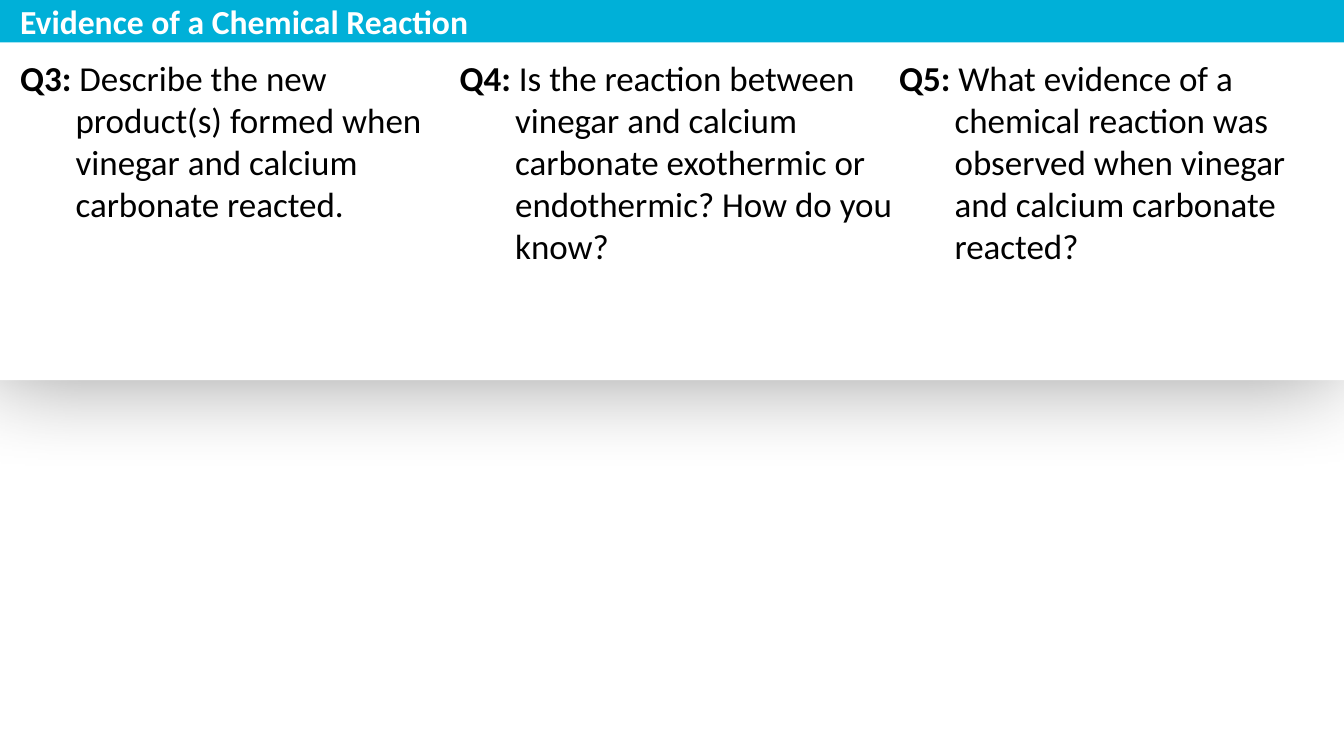
"""Build the slide with three questions on the evidence of a chemical reaction."""
from dataclasses import dataclass
from typing import Any

from lxml.etree import SubElement
from pptx import Presentation
from pptx.dml.color import RGBColor
from pptx.enum.shapes import MSO_SHAPE as Preset
from pptx.enum.text import MSO_ANCHOR as Anchor, MSO_AUTO_SIZE as AutoSize, PP_ALIGN as Align
from pptx.oxml.ns import qn
from pptx.util import Inches, Pt

WHITE = RGBColor(0xFF, 0xFF, 0xFF)
BLACK = RGBColor(0x00, 0x00, 0x00)
CYAN = RGBColor(0x00, 0xB0, 0xD8)

WIDTH, HEIGHT = Inches(13.33), Inches(7.38)
MARGIN, COLUMN_STEP, COLUMN_WIDTH = 1.5, 32.7, 32.4
HANG = Inches(0.55)

FRAME_FORMAT = {
    "margin_left": 0, "margin_right": 0, "margin_top": 0, "margin_bottom": 0,
    "word_wrap": True, "auto_size": AutoSize.NONE,
}
PARAGRAPH_FORMAT = {
    "alignment": Align.LEFT, "space_before": Pt(0), "space_after": Pt(0), "line_spacing": 1.0,
}


@dataclass(frozen=True)
class Area:
    """A rectangle in percent of the slide's width and height."""
    left: float
    top: float
    width: float
    height: float


@dataclass(frozen=True)
class Band:
    """A full-width filled rectangle."""
    area: Area
    fill: RGBColor
    shadowed: bool = False


@dataclass(frozen=True)
class Question:
    """A numbered question."""
    label: str
    wording: str


BANDS = [
    Band(Area(0, 3.66, 100, 47.43), WHITE, shadowed=True),
    Band(Area(0, 0, 100, 5.69), CYAN),
]
QUESTIONS = [
    Question("Q3: ", "Describe the new product(s) formed when vinegar and calcium "
                     "carbonate reacted."),
    Question("Q4: ", "Is the reaction between vinegar and calcium carbonate exothermic "
                     "or endothermic? How do you know?"),
    Question("Q5: ", "What evidence of a chemical reaction was observed when vinegar "
                     "and calcium carbonate reacted?"),
]


def apply(target: Any, values: dict[str, Any]) -> None:
    """Set each named attribute on the target."""
    for attribute, value in values.items():
        setattr(target, attribute, value)


def bounds(area: Area) -> dict[str, int]:
    """Turn percentages into slide lengths."""
    return {
        "left": round(WIDTH * area.left / 100), "top": round(HEIGHT * area.top / 100),
        "width": round(WIDTH * area.width / 100), "height": round(HEIGHT * area.height / 100),
    }


def cast_shadow(panel: Any) -> None:
    """Give the panel a wide soft shadow."""
    effects = panel._element.spPr.find(qn("a:effectLst"))
    shadow = SubElement(effects, qn("a:outerShdw"), blurRad=str(Pt(68)), dist=str(Pt(5)),
                        dir="10800000", algn="ctr", rotWithShape="0")
    tint = SubElement(shadow, qn("a:srgbClr"), val=str(BLACK))
    SubElement(tint, qn("a:alpha"), val="40000")


def draw_band(slide: Any, band: Band, depth: int) -> None:
    """Draw a band behind the text at the given depth."""
    strip = slide.shapes.add_shape(Preset.RECTANGLE, **bounds(band.area))
    strip.fill.solid()
    strip.fill.fore_color.rgb = band.fill
    strip.line.fill.background()
    strip.shadow.inherit = False
    if band.shadowed:
        cast_shadow(strip)
    slide.shapes._spTree.insert(2 + depth, strip._element)


def prepare(holder: Any, area: Area, anchor: Anchor) -> Any:
    """Place a placeholder and return its formatted paragraph."""
    apply(holder, bounds(area))
    apply(holder.text_frame, FRAME_FORMAT | {"vertical_anchor": anchor})
    paragraph = holder.text_frame.paragraphs[0]
    apply(paragraph, PARAGRAPH_FORMAT)
    return paragraph


def write(paragraph: Any, words: str, size: float, color: RGBColor, bold: bool) -> None:
    """Add a run in the slide's font."""
    run = paragraph.add_run()
    run.text = words
    apply(run.font, {"name": "Calibri", "size": Pt(size), "bold": bold})
    run.font.color.rgb = color


def write_question(holder: Any, question: Question, column: int) -> None:
    """Write a question with a hanging label in its column."""
    area = Area(MARGIN + column * COLUMN_STEP, 7.59, COLUMN_WIDTH, 28.46)
    paragraph = prepare(holder, area, Anchor.TOP)
    properties = paragraph._p.get_or_add_pPr()
    properties.set("marL", str(HANG))
    properties.set("indent", str(-HANG))
    SubElement(properties, qn("a:buNone"))
    write(paragraph, question.label, 25, BLACK, True)
    write(paragraph, question.wording, 25, BLACK, False)


def main() -> None:
    """Build and save the slide."""
    deck = Presentation()
    apply(deck, {"slide_width": WIDTH, "slide_height": HEIGHT})
    slide = deck.slides.add_slide(deck.slide_layouts.get_by_name("Comparison"))
    heading, *bodies = slide.placeholders
    for depth, band in enumerate(BANDS):
        draw_band(slide, band, depth)
    title = prepare(heading, Area(MARGIN, 0, 100 - 2 * MARGIN, 5.69), Anchor.MIDDLE)
    write(title, "Evidence of a Chemical Reaction", 24, WHITE, True)
    for column, (holder, question) in enumerate(zip(bodies, QUESTIONS)):
        write_question(holder, question, column)
    for spare in bodies[len(QUESTIONS):]:
        spare._element.getparent().remove(spare._element)
    deck.save("out.pptx")


if __name__ == "__main__":
    main()
